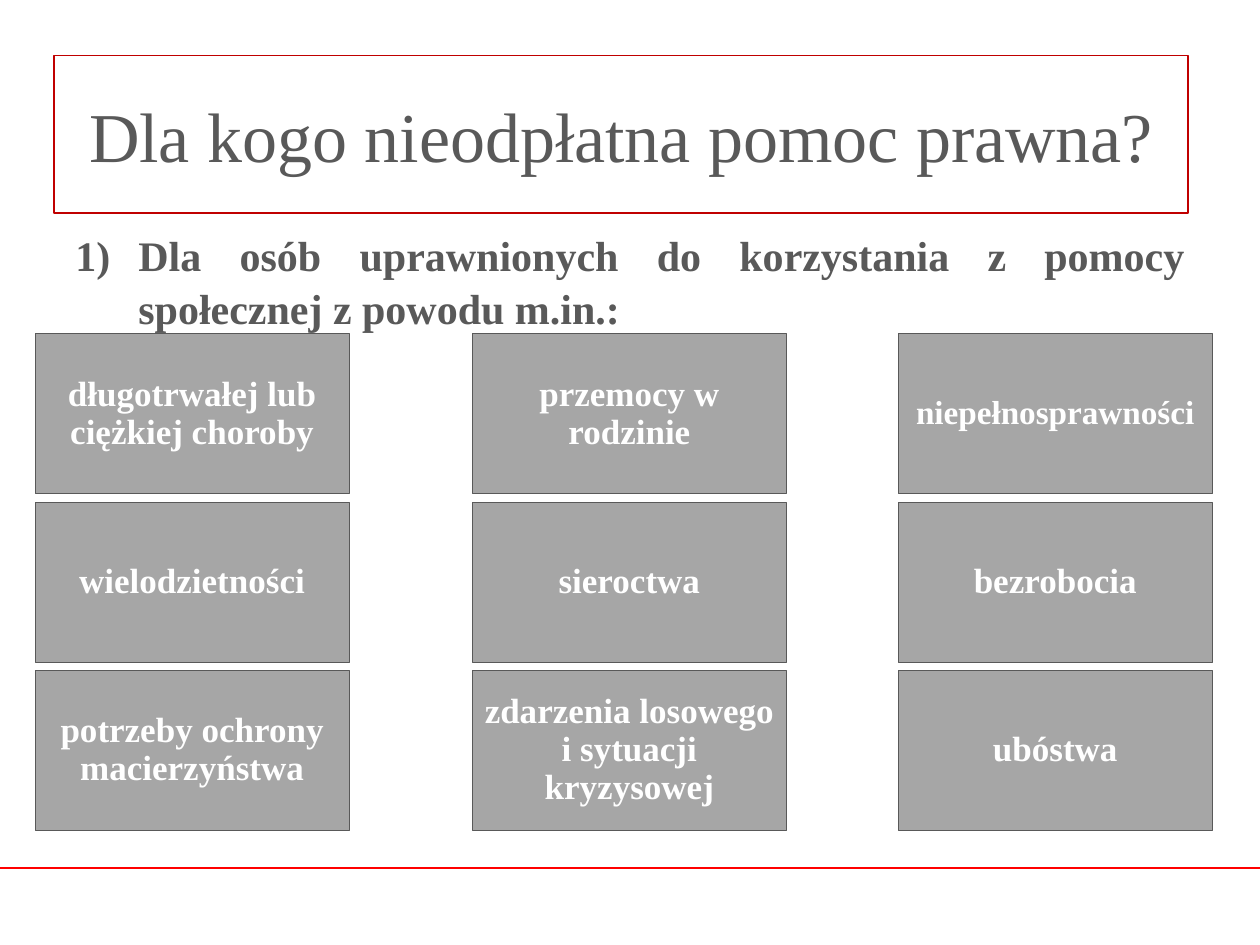
from dataclasses import dataclass

from lxml import etree
from pptx import Presentation
from pptx import util as u
from pptx.dml.color import RGBColor
from pptx.enum import shapes, text
from pptx.oxml.ns import qn


@dataclass(frozen=True)
class Theme:
    font: str = "Times New Roman"
    ink: str = "595959"
    white: str = "FFFFFF"
    tile: str = "A6A6A6"
    frame: str = "C00000"
    rule: str = "FF0000"
    title_size: int = 40
    lead_size: int = 24
    tile_size: int = 20
    long_word_size: int = 19


THEME = Theme()
COLUMNS = (0.28, 3.75, 7.13)
FIRST_ROW, ROW_STEP = 2.65, 1.335
TILE_WIDTH, TILE_HEIGHT = 2.49, 1.27

REASONS = (
    ("długotrwałej lub ciężkiej choroby", "przemocy w rodzinie", "niepełnosprawności"),
    ("wielodzietności", "sieroctwa", "bezrobocia"),
    ("potrzeby ochrony macierzyństwa", "zdarzenia losowego i sytuacji kryzysowej", "ubóstwa"),
)


def color(value):
    return RGBColor.from_string(value)


def style(paragraph, size, ink, alignment, bold=False):
    paragraph.alignment = alignment
    font = paragraph.font
    font.name, font.size, font.bold = THEME.font, u.Pt(size), bold
    font.color.rgb = color(ink)


def add_box(slide, box, wording, fill, line, line_width, size, ink, bold=False):
    """Add a filled, outlined rectangle with centred text."""
    shape = slide.shapes.add_shape(shapes.MSO_SHAPE.RECTANGLE, *map(u.Inches, box))
    shape.shadow.inherit = False
    shape.fill.solid()
    shape.fill.fore_color.rgb = color(fill)
    shape.line.color.rgb = color(line)
    shape.line.width = u.Pt(line_width)
    frame = shape.text_frame
    frame.text = wording
    frame.word_wrap = True
    frame.vertical_anchor = text.MSO_ANCHOR.MIDDLE
    style(frame.paragraphs[0], size, ink, text.PP_ALIGN.CENTER, bold)
    return shape


def add_numbered_text(slide, box, wording):
    """Add a justified paragraph with an automatic number."""
    frame = slide.shapes.add_textbox(*map(u.Inches, box)).text_frame
    frame.word_wrap = True
    frame.text = wording
    paragraph = frame.paragraphs[0]
    properties = paragraph._p.get_or_add_pPr()
    properties.set("marL", str(u.Inches(0.5)))
    properties.set("indent", str(u.Inches(-0.5)))
    etree.SubElement(properties, qn("a:buFont"), typeface=THEME.font)
    etree.SubElement(properties, qn("a:buAutoNum"), type="arabicParenR")
    paragraph.line_spacing = 1.05
    style(paragraph, THEME.lead_size, THEME.ink, text.PP_ALIGN.JUSTIFY, bold=True)
    # The number takes its look from the first run
    font = paragraph.runs[0].font
    font.name, font.size, font.bold = THEME.font, u.Pt(THEME.lead_size), True
    font.color.rgb = color(THEME.ink)


def add_rule(slide, width, y):
    """Add a horizontal line across the slide."""
    rule = slide.shapes.add_connector(
        shapes.MSO_CONNECTOR.STRAIGHT, 0, u.Inches(y), width, u.Inches(y))
    rule.line.color.rgb = color(THEME.rule)
    rule.line.width = u.Pt(1)
    etree.SubElement(rule._element.spPr, qn("a:effectLst"))


def add_tile(slide, column, row, wording):
    """Add one reason at its place in the grid."""
    box = (COLUMNS[column], FIRST_ROW + row * ROW_STEP, TILE_WIDTH, TILE_HEIGHT)
    size = THEME.long_word_size if wording == "niepełnosprawności" else THEME.tile_size
    tile = add_box(slide, box, wording, THEME.tile, THEME.ink, 0.5,
                   size, THEME.white, bold=True)
    frame = tile.text_frame
    frame.margin_left = frame.margin_right = u.Inches(0.08)
    frame.margin_top = frame.margin_bottom = u.Inches(0.08)
    frame.paragraphs[0].line_spacing = 0.9


def main():
    presentation = Presentation()
    presentation.slide_width, presentation.slide_height = u.Inches(10), u.Inches(7.5)
    slide = presentation.slides.add_slide(presentation.slide_layouts[6])

    # Heading and lead-in
    add_box(slide, (0.43, 0.44, 9, 1.25), "Dla kogo nieodpłatna pomoc prawna?",
            THEME.white, THEME.frame, 0.75, THEME.title_size, THEME.ink)
    add_numbered_text(
        slide, (0.5, 1.75, 9, 5.07),
        "Dla osób uprawnionych do korzystania z pomocy społecznej z powodu m.in.:")

    # Footer rule
    add_rule(slide, presentation.slide_width, 6.89)

    # Grid of reasons
    for row, reasons in enumerate(REASONS):
        for column, wording in enumerate(reasons):
            add_tile(slide, column, row, wording)

    presentation.save("out.pptx")


if __name__ == "__main__":
    main()
